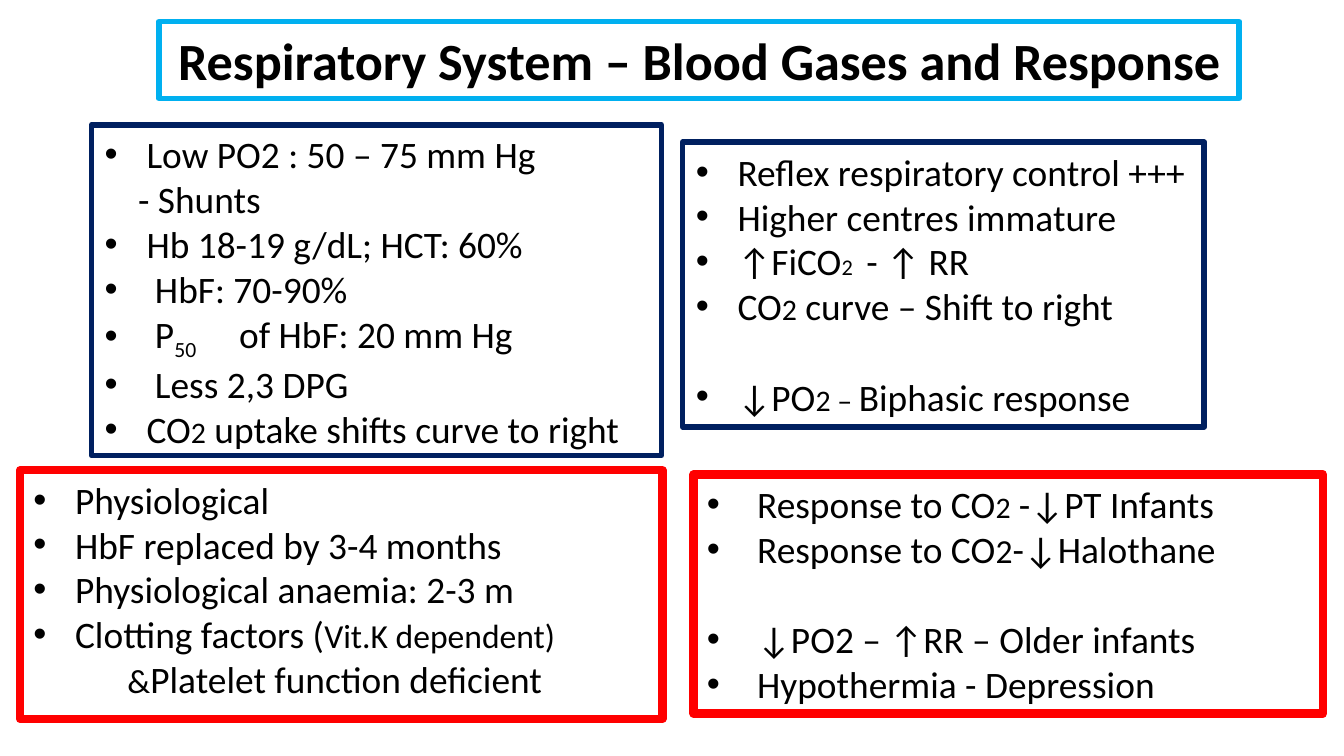
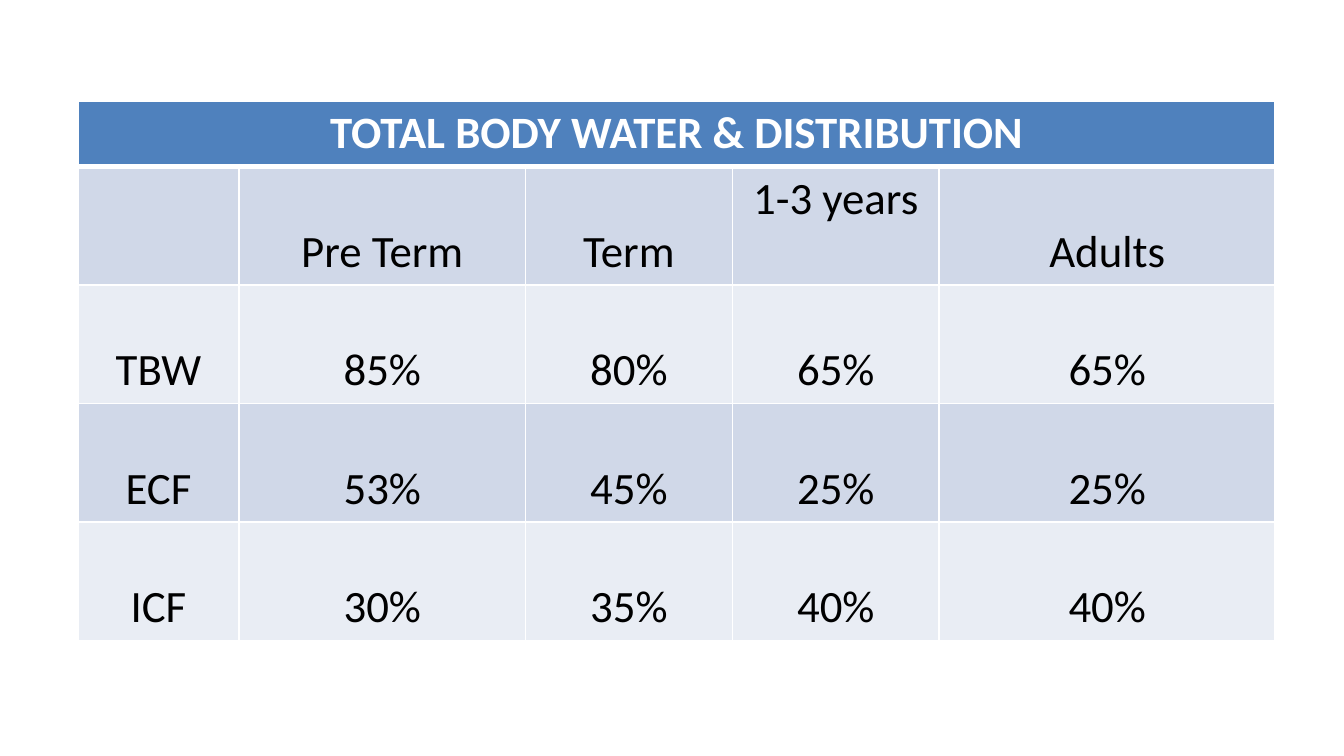
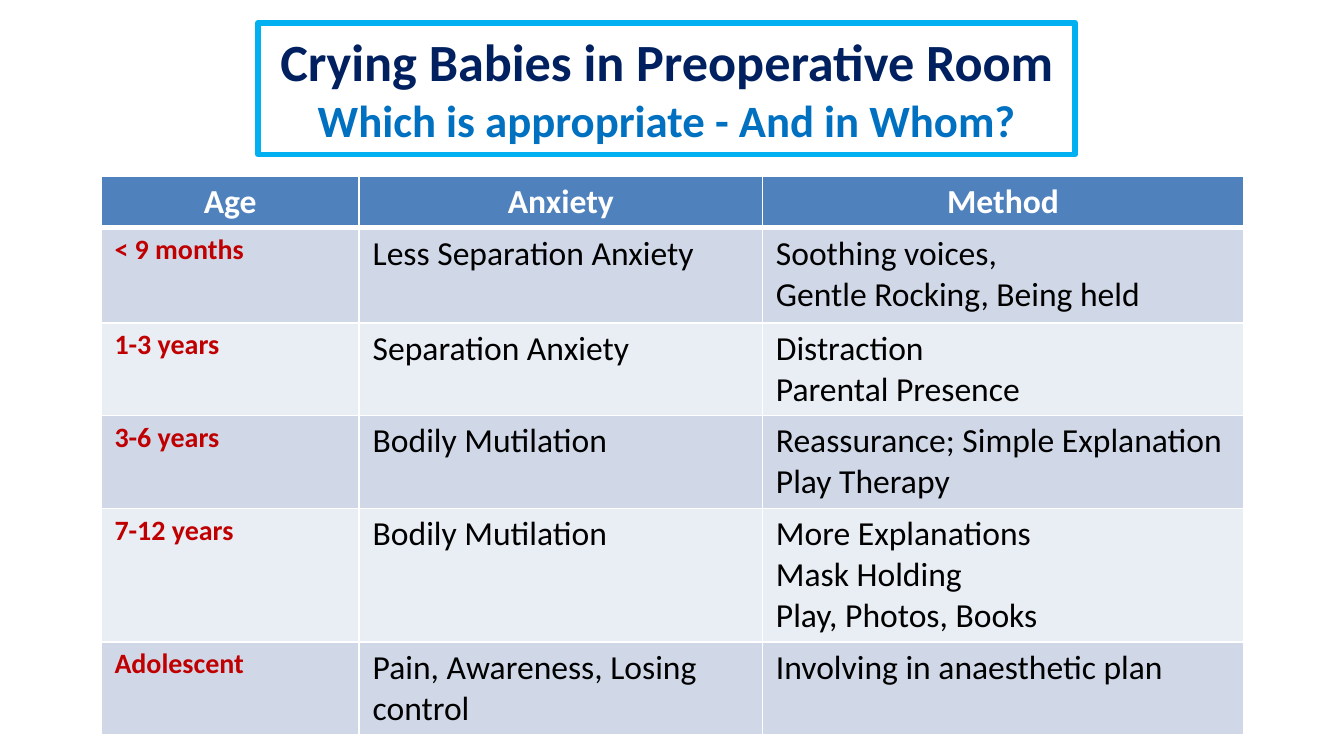
from lxml.etree import SubElement
from pptx import Presentation
from pptx.dml.color import RGBColor
from pptx.enum.text import MSO_ANCHOR, MSO_AUTO_SIZE, PP_ALIGN
from pptx.oxml.ns import qn
from pptx.util import Cm, Pt

HUES = {
    "black": "000000", "white": "FFFFFF", "navy": "002060", "sky": "00B0F0",
    "blue": "0070C0", "red": "FF0000", "wine": "C00000",
    "head": "4F81BD", "odd": "D0D8E8", "even": "E9EDF4",
}
COLOR = {name: RGBColor.from_string(code) for name, code in HUES.items()}
SUB = "sub"


def put(para, text, size, hue="black", bold=False):
    """Add one run of text to a paragraph."""
    run = para.add_run()
    run.text = text
    form = {"name": "Calibri", "size": Pt(20 if size == SUB else size), "bold": bold}
    for key, value in form.items():
        setattr(run.font, key, value)
    run.font.color.rgb = COLOR[hue]
    if size == SUB:
        run.font._element.set("baseline", "-25000")


def frame(shape, hue, width):
    """Outline a text shape and return its text frame."""
    shape.line.color.rgb = COLOR[hue]
    shape.line.width = Pt(width)
    text = shape.text_frame
    form = {"word_wrap": True, "auto_size": MSO_AUTO_SIZE.NONE}
    for key, value in form.items():
        setattr(text, key, value)
    return text


deck = Presentation()
deck.slide_width, deck.slide_height = Cm(25.4), Cm(14.29)
titled, blank = deck.slide_layouts[5], deck.slide_layouts[6]
gases, water, crying = [deck.slides.add_slide(kind) for kind in (titled, blank, titled)]

# Titles: slide, place, lines of (text, size, colour)
titles = [
    (gases, (3, 0.41, 20.42, 1.45),
     [("Respiratory System – Blood Gases and Response", 28, "black")]),
    (crying, (4.88, 0.43, 15.44, 2.49),
     [("Crying Babies in Preoperative Room", 28, "navy"),
      ("Which is appropriate - And in Whom?", 24, "blue")]),
]
for slide, place, lines in titles:
    title = slide.shapes.title
    for key, value in zip(("left", "top", "width", "height"), place):
        setattr(title, key, Cm(value))
    text = frame(title, "sky", 3)
    text.vertical_anchor = MSO_ANCHOR.TOP
    for row, (words, size, hue) in enumerate(lines):
        para = text.add_paragraph() if row else text.paragraphs[0]
        para.alignment = PP_ALIGN.CENTER
        put(para, words, size, hue, True)

# Boxes: place, colour, line width, lines of (bullet, indent, space before, runs)
NEAR, FAR, GAP = 0.79, 0.95, 24.4
boxes = [
    ((1.73, 2.36, 10.77, 6.25), "navy", 3, [
        ("•", NEAR, 0, [("Low PO2 : 50 – 75 mm Hg", 20)]),
        ("", 0.63, 0, [("- Shunts", 20)]),
        ("•", NEAR, 0, [("Hb 18-19 g/dL; HCT: 60%", 20)]),
        ("•", FAR, 0, [("HbF: 70-90%", 20)]),
        ("•", FAR, 0, [("P", 20), ("50", SUB), ("\tof HbF: 20 mm Hg", 20)]),
        ("•", FAR, 0, [("Less 2,3 DPG", 20)]),
        ("•", NEAR, 0, [("CO", 20), ("2", 16), (" uptake shifts curve to right", 20)]),
    ]),
    ((12.9, 2.69, 9.86, 5.38), "navy", 3, [
        ("•", NEAR, 0, [("Reflex respiratory control +++", 20)]),
        ("•", NEAR, 0, [("Higher centres immature", 20)]),
        ("•", NEAR, 0, [("↑FiCO", 20), ("2 ", 12), (" - ↑ RR", 20)]),
        ("•", NEAR, 0, [("CO", 20), ("2", 16), (" curve – Shift to right", 20)]),
        ("•", NEAR, GAP, [("↓PO", 20), ("2 – ", 16), ("Biphasic response", 20)]),
    ]),
    ((0.38, 8.89, 12.14, 4.7), "red", 4.5, [
        ("•", NEAR, 0, [("Physiological", 20)]),
        ("•", NEAR, 0, [("HbF replaced by 3-4 months", 20)]),
        ("•", NEAR, 0, [("Physiological anaemia: 2-3 m", 20)]),
        ("•", NEAR, 0, [("Clotting factors (", 20), ("Vit.K dependent)", 18)]),
        ("", 1.78, 0, [("&", 18), ("Platelet function deficient", 20)]),
    ]),
    ((13.11, 8.97, 11.89, 4.52), "red", 4.5, [
        ("•", FAR, 0, [("Response to CO", 20), ("2", 16), (" -↓PT Infants", 20)]),
        ("•", FAR, 0, [("Response to CO", 20), ("2", 18), ("-↓Halothane", 20)]),
        ("•", FAR, GAP, [("↓PO2 – ↑RR – Older infants", 20)]),
        ("•", FAR, 0, [("Hypothermia - Depression", 20)]),
    ]),
]
for place, hue, width, lines in boxes:
    text = frame(gases.shapes.add_textbox(*map(Cm, place)), hue, width)
    for row, (mark, indent, gap, runs) in enumerate(lines):
        para = text.add_paragraph() if row else text.paragraphs[0]
        para.space_before = Pt(gap)
        props = para._p.get_or_add_pPr()
        props.set("marL", str(Cm(indent)))
        if mark:
            props.set("indent", str(-Cm(indent)))
            SubElement(props, qn("a:buFont"), typeface="Arial")
            SubElement(props, qn("a:buChar"), char=mark)
        for words, size in runs:
            put(para, words, size)

# Tables: slide, corner, column widths, row heights, head size, body rows
tables = [
    (water, (1.47, 1.91), (3.05, 5.41, 3.91, 3.91, 6.35), (1.19, *[2.24] * 4), 24, [
        ("TOTAL BODY WATER & DISTRIBUTION", "", "", "", ""),
        ("", "Pre Term", "Term", "1-3 years", "Adults"),
        ("TBW", "85%", "80%", "65%", "65%"),
        ("ECF", "53%", "45%", "25%", "25%"),
        ("ICF", "30%", "35%", "40%", "40%"),
    ]),
    (crying, (1.91, 3.33), (4.88, 7.62, 9.09), (0.95, 1.8, 1.73, 1.73, 2.5, 1.73), 18, [
        ("Age", "Anxiety", "Method"),
        ("< 9 months", "Less Separation Anxiety",
         "Soothing voices,\nGentle Rocking, Being held"),
        ("1-3 years", "Separation Anxiety", "Distraction\nParental Presence"),
        ("3-6 years", "Bodily Mutilation",
         "Reassurance; Simple Explanation\nPlay Therapy"),
        ("7-12 years", "Bodily Mutilation",
         "More Explanations\nMask Holding\nPlay, Photos, Books"),
        ("Adolescent", "Pain, Awareness, Losing control",
         "Involving in anaesthetic plan"),
    ]),
]
for slide, (left, top), wides, highs, size, rows in tables:
    grid = slide.shapes.add_table(len(highs), len(wides), Cm(left), Cm(top),
                                  Cm(sum(wides)), Cm(sum(highs))).table
    grid.horz_banding = False
    for col, wide in zip(grid.columns, wides):
        col.width = Cm(wide)
    for row, high in zip(grid.rows, highs):
        row.height = Cm(high)
    if slide is water:
        grid.cell(0, 0).merge(grid.cell(0, len(wides) - 1))

    for r, row in enumerate(rows):
        for c, words in enumerate(row):
            cell = grid.cell(r, c)

            # White borders, thick under the head row
            props = cell._tc.get_or_add_tcPr()
            for side in ("lnL", "lnR", "lnT", "lnB"):
                thick = (r, side) in ((0, "lnB"), (1, "lnT"))
                edge = SubElement(props, qn("a:" + side), w=str(Pt(3 if thick else 1)))
                fill = SubElement(edge, qn("a:solidFill"))
                SubElement(fill, qn("a:srgbClr"), val=HUES["white"])
            cell.fill.solid()
            cell.fill.fore_color.rgb = COLOR["head" if r == 0 else "odd" if r % 2 else "even"]

            # Water figures sit low in their cells, but for one heading
            low = slide is water and r > 0 and words != "1-3 years"
            form = {"margin_top": Cm(0.1), "margin_bottom": Cm(0.1),
                    "vertical_anchor": MSO_ANCHOR.BOTTOM if low else MSO_ANCHOR.TOP}
            for key, value in form.items():
                setattr(cell, key, value)

            for n, line in enumerate(words.split("\n") if words else []):
                text = cell.text_frame
                para = text.add_paragraph() if n else text.paragraphs[0]
                mid = slide is water or r == 0
                para.alignment = PP_ALIGN.CENTER if mid else PP_ALIGN.LEFT
                if r == 0:
                    put(para, line, size, "white", True)
                elif slide is crying and c == 0:
                    put(para, line, 15, "wine", True)
                else:
                    put(para, line, size)

deck.save("out.pptx")
